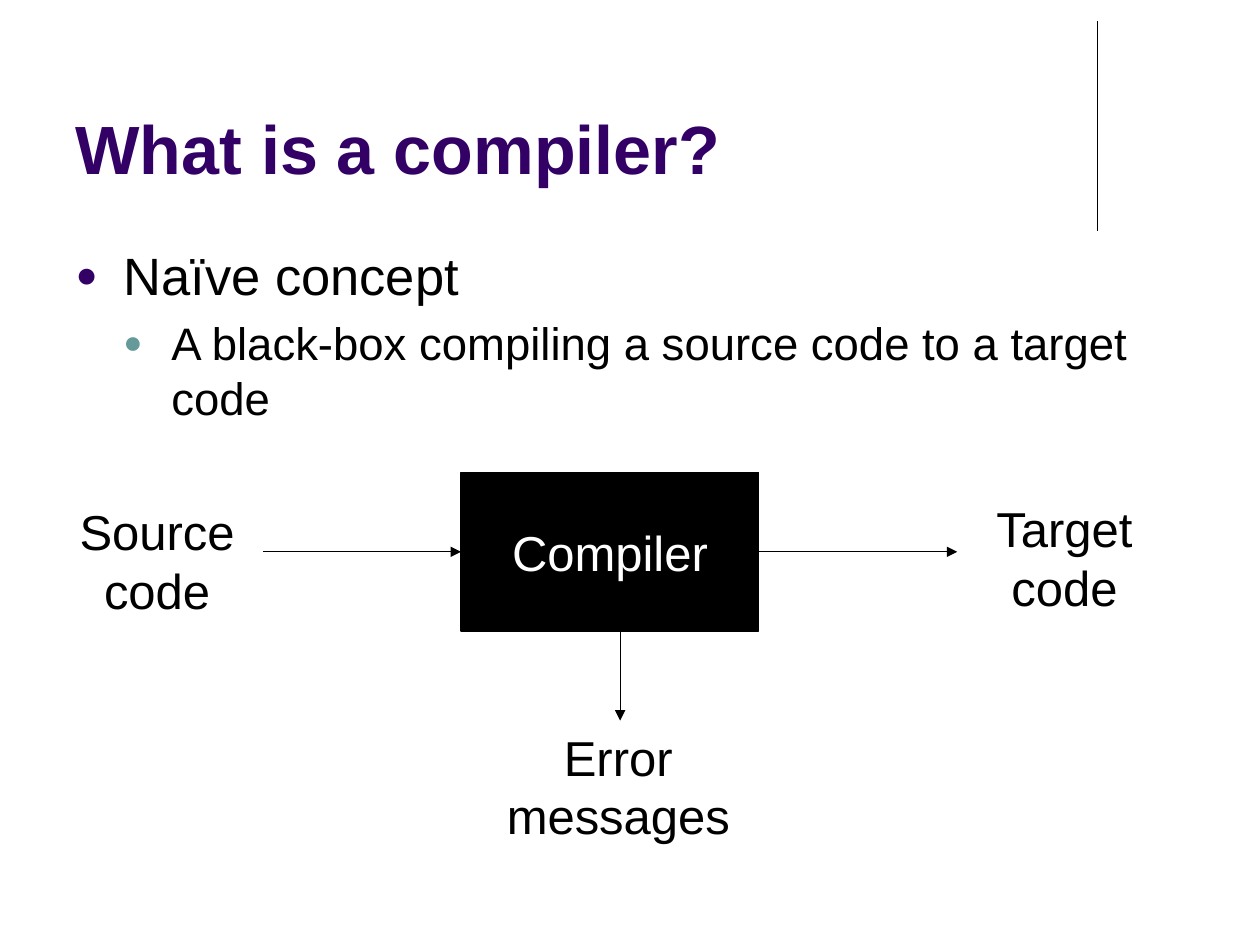
from dataclasses import dataclass
from typing import Optional

import pptx
import pptx.dml.color
import pptx.enum.dml
import pptx.enum.shapes
import pptx.enum.text
import pptx.oxml
import pptx.oxml.ns
import pptx.util
from lxml import etree

Pt = pptx.util.Pt
Align = pptx.enum.text.PP_ALIGN
Anchor = pptx.enum.text.MSO_ANCHOR
AutoSize = pptx.enum.text.MSO_AUTO_SIZE

COLORS = {
    "text": "000000",
    "inverse": "FFFFFF",
    "title": "330066",
    "sub_bullet": "669999",
}
FONT = "Arial"
LABEL_SIZE = 28
LINE_WIDTH = 0.75
BULLET_INDENT = 27.36


@dataclass
class Label:
    text: str
    left: float
    top: float
    width: float
    height: float = 74.9


@dataclass
class Line:
    start: tuple[float, float]
    end: tuple[float, float]
    arrow: bool = True
    start_side: Optional[int] = None
    end_side: Optional[int] = None


@dataclass
class Bullet:
    text: str
    level: int
    size: float
    color: str
    space_before: float


BOX_LEFT, BOX_TOP, BOX_WIDTH, BOX_HEIGHT = 263.5, 270, 170, 90.7
BOX_RIGHT, BOX_BOTTOM = BOX_LEFT + BOX_WIDTH, BOX_TOP + BOX_HEIGHT
BOX_MIDDLE = BOX_TOP + BOX_HEIGHT / 2
ERROR_X = 354.4

BULLETS = [
    Bullet("Naïve concept", 0, 30, "title", 0),
    Bullet("A black-box compiling a source code to a target code", 1, 26, "sub_bullet", 5.2),
]
LABELS = [
    Label("Source\vcode", 37.5, 283, 104.5),
    Label("Target\vcode", 561.5, 281.3, 93.6),
    Label("Error\vmessages", 281.3, 412, 144),
]
LINES = [
    Line((627, 12), (627, 132), arrow=False),
    Line((BOX_RIGHT, BOX_MIDDLE), (547, BOX_MIDDLE), start_side=3),
    Line((150.5, BOX_MIDDLE), (BOX_LEFT, BOX_MIDDLE), end_side=1),
    Line((ERROR_X, BOX_BOTTOM), (ERROR_X, 411.8)),
]


def rgb(name: str):
    return pptx.dml.color.RGBColor.from_string(COLORS[name])


def write(paragraph, text: str, *, size: float, color: str = "text",
          bold: bool = False, align=Align.LEFT) -> None:
    paragraph.text = text
    paragraph.alignment = align
    font = paragraph.font
    font.name, font.size, font.bold = FONT, Pt(size), bold
    font.color.rgb = rgb(color)


def place(shape, left: float, top: float, width: float, height: float) -> None:
    shape.left, shape.top = Pt(left), Pt(top)
    shape.width, shape.height = Pt(width), Pt(height)


def add_bullet(paragraph, bullet: Bullet) -> None:
    paragraph.level = bullet.level
    paragraph.space_before = Pt(bullet.space_before)
    properties = paragraph._p.get_or_add_pPr()
    properties.set("marL", str(Pt(BULLET_INDENT * (bullet.level + 1))))
    properties.set("indent", str(-Pt(BULLET_INDENT)))
    qn = pptx.oxml.ns.qn
    color = etree.SubElement(properties, qn("a:buClr"))
    etree.SubElement(color, qn("a:srgbClr"), val=COLORS[bullet.color])
    etree.SubElement(properties, qn("a:buSzPct"), val="70000")
    etree.SubElement(properties, qn("a:buFont"), typeface=FONT)
    etree.SubElement(properties, qn("a:buChar"), char="●")
    write(paragraph, bullet.text, size=bullet.size)


def add_compiler_box(slide):
    box = slide.shapes.add_shape(
        pptx.enum.shapes.MSO_SHAPE.RECTANGLE,
        Pt(BOX_LEFT), Pt(BOX_TOP), Pt(BOX_WIDTH), Pt(BOX_HEIGHT))
    box.shadow.inherit = False
    box.fill.solid()
    box.fill.fore_color.rgb = rgb("text")
    box.line.color.rgb = rgb("text")
    box.line.width = Pt(LINE_WIDTH)
    box.text_frame.word_wrap = False
    box.text_frame.vertical_anchor = Anchor.MIDDLE
    write(box.text_frame.paragraphs[0], "Compiler", size=LABEL_SIZE,
          color="inverse", align=Align.CENTER)
    return box


def add_line(slide, line: Line, box) -> None:
    connector = slide.shapes.add_connector(
        pptx.enum.shapes.MSO_CONNECTOR.STRAIGHT,
        *(Pt(value) for value in line.start + line.end))
    if line.start_side is not None:
        connector.begin_connect(box, line.start_side)
    if line.end_side is not None:
        connector.end_connect(box, line.end_side)
    connector.line.color.rgb = rgb("text")
    connector.line.width = Pt(LINE_WIDTH)
    qn = pptx.oxml.ns.qn
    if line.arrow:
        etree.SubElement(connector.line._get_or_add_ln(), qn("a:tailEnd"), type="triangle")
    etree.SubElement(connector._element.spPr, qn("a:effectLst"))


def add_label(slide, label: Label) -> None:
    box = slide.shapes.add_textbox(
        Pt(label.left), Pt(label.top), Pt(label.width), Pt(label.height))
    box.text_frame.word_wrap = False
    box.text_frame.auto_size = AutoSize.SHAPE_TO_FIT_TEXT
    write(box.text_frame.paragraphs[0], label.text, size=LABEL_SIZE, align=Align.CENTER)


def main() -> None:
    presentation = pptx.Presentation()
    presentation.slide_width, presentation.slide_height = Pt(720), Pt(540)
    slide = presentation.slides.add_slide(presentation.slide_layouts[1])

    title = slide.shapes.title
    place(title, 36, 9.4, 594, 102)
    title.text_frame.vertical_anchor = Anchor.BOTTOM
    title.text_frame.auto_size = AutoSize.NONE
    write(title.text_frame.paragraphs[0], "What is a compiler?",
          size=39, color="title", bold=True)

    body = slide.placeholders[1]
    place(body, 36, 135.4, 648, 123)
    frame = body.text_frame
    frame.auto_size = AutoSize.NONE
    for index, bullet in enumerate(BULLETS):
        paragraph = frame.add_paragraph() if index else frame.paragraphs[0]
        add_bullet(paragraph, bullet)

    box = add_compiler_box(slide)
    for line in LINES:
        add_line(slide, line, box)
    for label in LABELS:
        add_label(slide, label)

    presentation.save("out.pptx")


if __name__ == "__main__":
    main()
